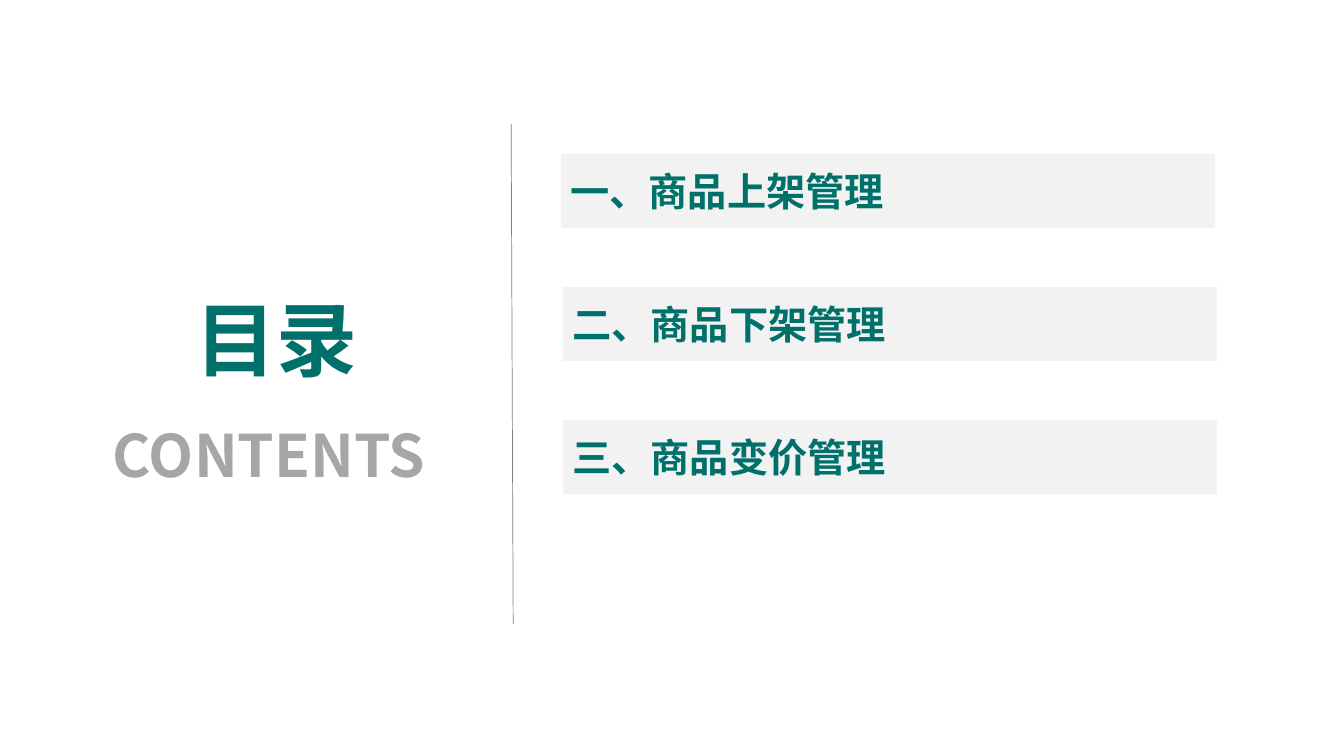
from lxml.etree import SubElement
from pptx import Presentation
from pptx.dml.color import RGBColor
from pptx.enum.shapes import MSO_CONNECTOR, MSO_SHAPE
from pptx.enum.text import MSO_ANCHOR, PP_ALIGN
from pptx.oxml.ns import qn
from pptx.util import Inches, Pt

FONT = "Noto Sans CJK SC"
GREEN, GREY, PALE, RULE, WHITE = "00706B", "A6A6A6", "F2F2F2", "7F7F7F", "FFFFFF"
HEADS = [
    ("CONTENTS", (1, 4.12, 4.04, 0.82), 41.8, GREY),
    ("目录", (1.82, 2.84, 2.01, 1.09), 57.8, GREEN),
]
ITEMS = [
    ("一、商品上架管理", 5.56),
    ("二、商品下架管理", 5.58),
    ("三、商品变价管理", 5.58),
]
TOP, STEP, WIDE, HIGH = 1.52, 1.32, 6.5, 0.75
DIVIDE = (5.07, 1.23, 5.09, 6.19)


def color(hex):
    return RGBColor.from_string(hex)


def inches(*nums):
    return [Inches(n) for n in nums]


def write(shape, text, size=28, tint=GREEN, pad=(0.1, 0.05, 0.1, 0.05)):
    frame = shape.text_frame
    frame.word_wrap = True
    frame.vertical_anchor = MSO_ANCHOR.MIDDLE
    (frame.margin_left, frame.margin_top,
     frame.margin_right, frame.margin_bottom) = inches(*pad)
    line = frame.paragraphs[0]
    line.alignment = PP_ALIGN.LEFT
    run = line.add_run()
    run.text = text
    font = run.font
    font.size, font.bold, font.name = Pt(size), True, FONT
    font.color.rgb = color(tint)
    SubElement(run._r.get_or_add_rPr(), qn("a:ea"), typeface=FONT)


deck = Presentation()
deck.slide_width, deck.slide_height = inches(13.33, 7.5)
slide = deck.slides.add_slide(deck.slide_layouts[6])
shapes = slide.shapes

for text, box, size, tint in HEADS:
    write(shapes.add_textbox(*inches(*box)), text, size=size, tint=tint,
          pad=(0.12, 0, 0.12, 0.06))

rule = shapes.add_connector(MSO_CONNECTOR.STRAIGHT, *inches(*DIVIDE))
rule.line.color.rgb = color(RULE)
rule.line.width = Pt(0.5)
SubElement(rule._element.spPr, qn("a:effectLst"))

for row, (text, left) in enumerate(ITEMS):
    bar = shapes.add_shape(MSO_SHAPE.RECTANGLE,
                           *inches(left, TOP + row * STEP, WIDE, HIGH))
    bar.shadow.inherit = False
    bar.fill.solid()
    bar.fill.fore_color.rgb = color(PALE)
    bar.line.color.rgb = color(WHITE)
    bar.line.width = Pt(0.75)
    write(bar, text)

deck.save("out.pptx")
